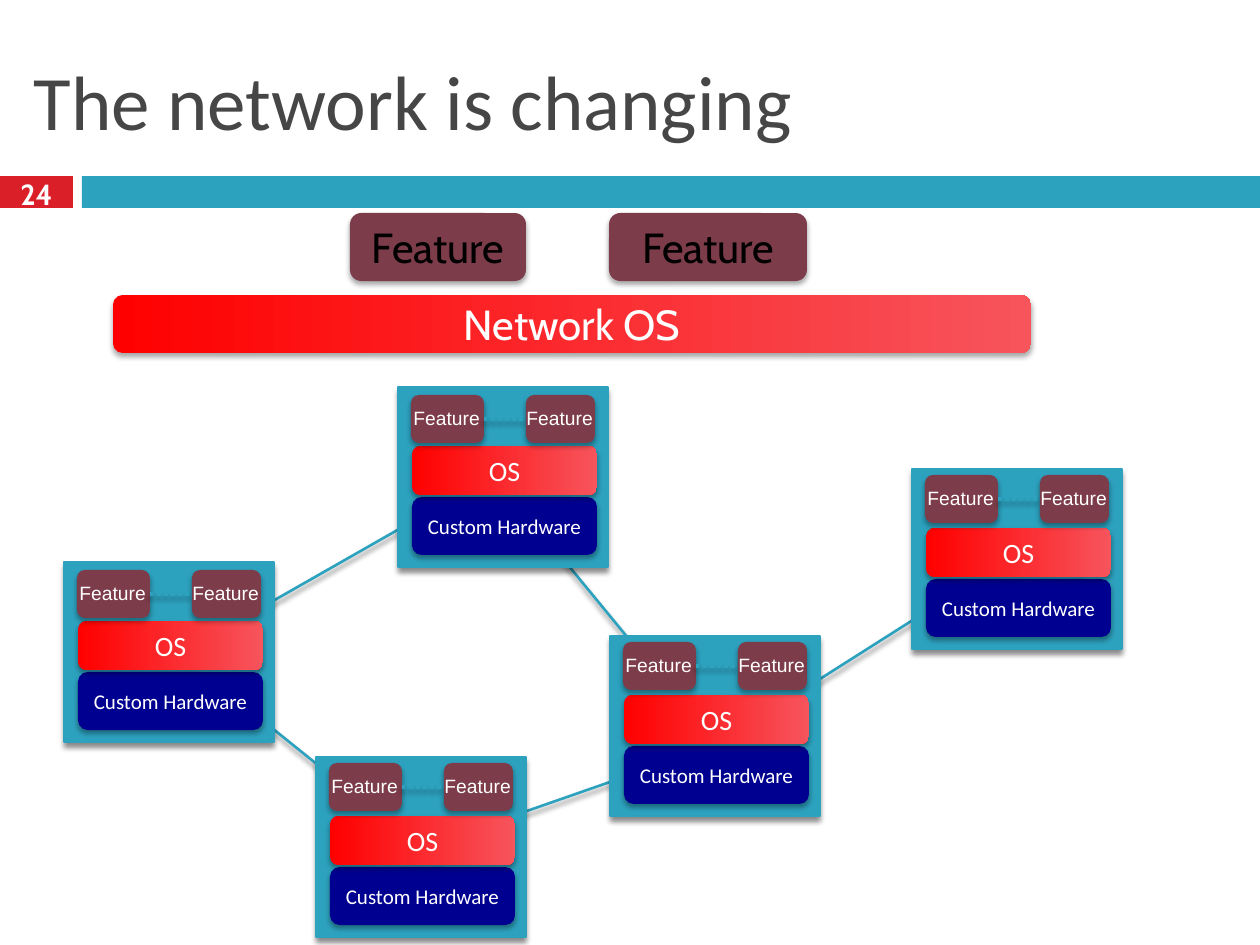
"""Builds a slide showing a network OS above five switches."""
from lxml.etree import SubElement
from pptx import Presentation
from pptx.dml.color import RGBColor
from pptx.enum.dml import MSO_LINE
from pptx.enum.shapes import MSO_CONNECTOR as Connector, MSO_SHAPE as Shape
from pptx.enum.text import MSO_ANCHOR as Anchor, MSO_AUTO_SIZE as AutoSize, PP_ALIGN as Align
from pptx.oxml.ns import qn
from pptx.util import Emu, Pt

SCALE = 914400 / 126
TEAL, MAROON, NAVY, WHITE = "2DA2BF", "7D3C4A", "000090", "FFFFFF"
RED_FADE = ("FF0000", "F7545C")
SWITCHES = {
    "west": (64, 562, 8),
    "north": (398, 387, 8),
    "east": (912, 469, 6),
    "south": (316, 757, 6),
    "middle": (610, 636, 6),
}
HUBS = {
    "west": (180, 654),
    "north": (494, 475),
    "east": (1017, 554),
    "south": (421, 848),
    "middle": (716, 745),
}
LINKS = [("west", "north"), ("north", "middle"), ("south", "middle"),
         ("west", "south"), ("middle", "east")]


def px(*lengths):
    """Turn px lengths into EMU."""
    return [Emu(round(length * SCALE)) for length in lengths]


def rgb(value):
    """Turn a hex string into a colour."""
    return RGBColor.from_string(value)


def add_shadow(shape, opacity, distance):
    """Give a shape or connector a soft shadow straight below it."""
    properties = shape._element.spPr
    effects = properties.find(qn("a:effectLst"))
    if effects is None:
        effects = SubElement(properties, qn("a:effectLst"))
    shadow = SubElement(effects, qn("a:outerShdw"), blurRad=str(Pt(3)),
                        dist=str(Pt(distance)), dir="5400000", rotWithShape="0")
    color = SubElement(shadow, qn("a:srgbClr"), val="000000")
    SubElement(color, qn("a:alpha"), val=str(opacity * 1000))


def write(shape, text, size, font, color, align=Align.CENTER, bold=False, wrap=False):
    """Write one run of text in a shape."""
    frame = shape.text_frame
    frame.word_wrap = wrap
    frame.vertical_anchor = Anchor.MIDDLE
    paragraph = frame.paragraphs[0]
    paragraph.alignment = align
    run = paragraph.add_run()
    run.text = text
    run.font.size = Pt(size)
    run.font.name = font
    run.font.bold = bold
    run.font.color.rgb = rgb(color)


def add_box(slide, box, fill, kind=Shape.ROUNDED_RECTANGLE):
    """Add a shape without line or shadow, filled plainly or with a fade."""
    shape = slide.shapes.add_shape(kind, *px(*box))
    shape.shadow.inherit = False
    shape.line.fill.background()
    if isinstance(fill, tuple):
        shape.fill.gradient()
        shape.fill.gradient_angle = 0
        for stop, color in zip(shape.fill.gradient_stops, fill):
            stop.color.rgb = rgb(color)
    else:
        shape.fill.solid()
        shape.fill.fore_color.rgb = rgb(fill)
    return shape


def add_block(slide, box, fill, text="", size=12, font="Calibri", color=WHITE):
    """Add a rounded, shadowed block with an optional label."""
    shape = add_box(slide, box, fill)
    add_shadow(shape, 35, 2)
    if text:
        write(shape, text, size, font, color)


def add_line(slide, start, end, width, dash=None):
    """Add a shadowed teal line."""
    line = slide.shapes.add_connector(Connector.STRAIGHT, *px(*start, *end))
    line.line.color.rgb = rgb(TEAL)
    line.line.width = Pt(width)
    if dash:
        line.line.dash_style = dash
    add_shadow(line, 45, 2.4)


def add_header(slide, left, top, width):
    """Add the title, the page number and the band below them."""
    title = slide.shapes.title
    title.left, title.top, title.width, title.height = px(left + 21, top + 32, width - 42, 136)
    write(title, "The network is changing", 44, "Calibri", "464646", Align.LEFT, wrap=True)
    add_box(slide, (left, top + 176, 73, 32), "DA1F28", Shape.RECTANGLE)
    add_box(slide, (left + 82, top + 176, width - 82, 32), TEAL, Shape.RECTANGLE)
    number = slide.shapes.add_textbox(*px(left, top + 173, 73, 42))
    write(number, "24", 16.6, "Cabin", WHITE, bold=True)


def add_control_plane(slide, left, top):
    """Add the network OS bar with its two features above."""
    add_block(slide, (left, top + 82, 918, 58), RED_FADE, "Network OS", 24, "Cabin")
    for offset, width in ((237, 176), (496, 198)):
        add_block(slide, (left + offset, top, width, 68), MAROON, "Feature", 24, "Cabin", "000000")


def add_features(slide, left, top):
    """Add a pair of small features joined by a dotted line."""
    pair = ((0, 73), (115, 69))
    for offset, width in pair:
        add_block(slide, (left + offset, top, width, 48), MAROON)
    add_line(slide, (left + 73, top + 24), (left + 115, top + 24), 2, MSO_LINE.ROUND_DOT)
    for offset, width in pair:
        label = slide.shapes.add_textbox(
            *px(left + offset + round((width - 92) / 2), top + 5, 92, 37))
        write(label, "Feature", 11, "Arial", WHITE, Align.LEFT)
        label.text_frame.vertical_anchor = Anchor.TOP
        label.text_frame.auto_size = AutoSize.SHAPE_TO_FIT_TEXT


def add_switch(slide, left, top, feature_gap):
    """Add a switch with its hardware, OS and features."""
    case = add_box(slide, (left, top, 210, 180), TEAL, Shape.RECTANGLE)
    case.line.color.rgb = rgb(TEAL)
    case.line.width = Pt(0.79)
    add_shadow(case, 45, 2.4)
    add_block(slide, (left + 14, top + 110, 185, 58), NAVY, "Custom Hardware")
    add_block(slide, (left + 14, top + 59, 185, 49), RED_FADE, "OS", 16)
    add_features(slide, left + 13, top + feature_gap)


def main():
    """Build and save the slide."""
    presentation = Presentation()
    presentation.slide_width, presentation.slide_height = px(1260, 945)
    slide = presentation.slides.add_slide(presentation.slide_layouts[5])
    add_header(slide, 0, 0, 1260)
    for start, end in LINKS:
        add_line(slide, HUBS[start], HUBS[end], 1.5)
    for switch in SWITCHES.values():
        add_switch(slide, *switch)
    add_control_plane(slide, 113, 213)
    presentation.save("out.pptx")


if __name__ == "__main__":
    main()
